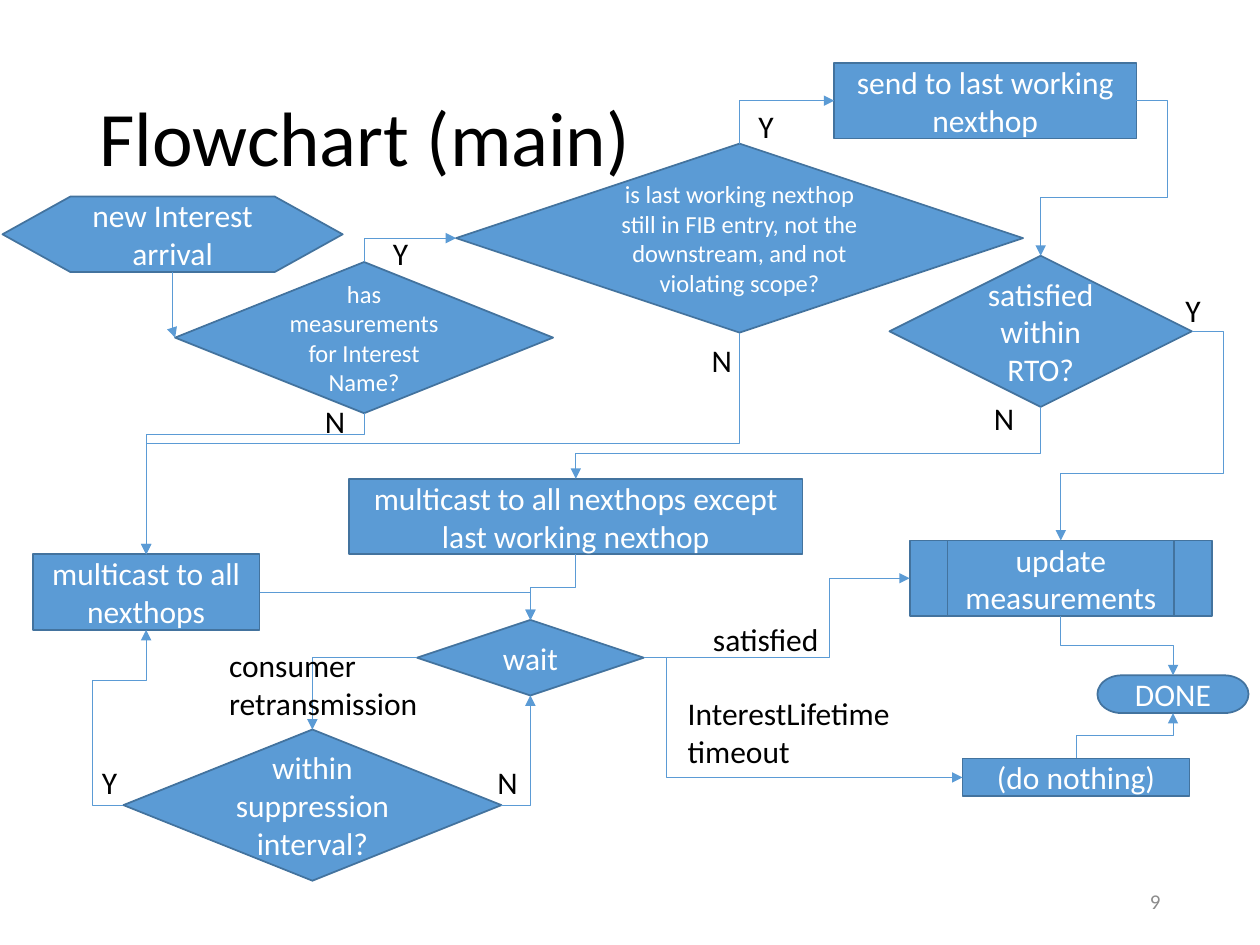
from dataclasses import dataclass
from typing import Any

from lxml.etree import SubElement
from pptx import Presentation
from pptx.dml.color import RGBColor
from pptx.enum.shapes import MSO_CONNECTOR as Route, MSO_SHAPE as Flow
from pptx.enum.text import MSO_ANCHOR as Anchor, MSO_AUTO_SIZE as Fit, PP_ALIGN as Align
from pptx.oxml.ns import qn
from pptx.util import Pt

PX = 9144
BLUE = RGBColor(0x5B, 0x9B, 0xD5)
DARK_BLUE = RGBColor(0x43, 0x73, 0x9E)
WHITE = RGBColor(0xFF, 0xFF, 0xFF)
BLACK = RGBColor(0, 0, 0)
GREY = RGBColor(0x8C, 0x8C, 0x8C)
TOP, LEFT, BOTTOM, RIGHT = range(4)


@dataclass(frozen=True)
class Step:
    kind: Any
    left: int
    top: int
    width: int
    height: int
    text: str
    size: int = 18

    def site(self, side: int) -> tuple[float, float]:
        x, y = self.left + self.width / 2, self.top + self.height / 2
        return ((x, self.top), (self.left, y),
                (x, self.top + self.height), (self.left + self.width, y))[side]


@dataclass(frozen=True)
class Link:
    source: str
    source_side: int
    target: str
    target_side: int
    turns: tuple[int, ...] = ()


@dataclass(frozen=True)
class Label:
    left: int
    top: int
    width: int
    height: int
    text: str
    wrap: bool = False


STEPS = {
    "arrival": Step(Flow.FLOWCHART_PREPARATION, 2, 156, 270, 60, "new Interest arrival"),
    "measured": Step(Flow.FLOWCHART_DECISION, 139, 208, 300, 120,
                     "has measurements for Interest Name?", 14),
    "multicast": Step(Flow.FLOWCHART_PROCESS, 26, 440, 180, 60, "multicast to all nexthops"),
    "send": Step(Flow.FLOWCHART_PROCESS, 662, 50, 240, 60, "send to last working nexthop"),
    "rto": Step(Flow.FLOWCHART_DECISION, 706, 203, 240, 120, "satisfied within RTO?"),
    "others": Step(Flow.FLOWCHART_PROCESS, 277, 380, 360, 60,
                   "multicast to all nexthops except last working nexthop"),
    "wait": Step(Flow.FLOWCHART_DECISION, 331, 492, 180, 60, "wait"),
    "done": Step(Flow.FLOWCHART_TERMINATOR, 871, 536, 120, 30, "DONE"),
    "suppress": Step(Flow.FLOWCHART_DECISION, 98, 579, 300, 120, "within suppression interval?"),
    "nothing": Step(Flow.FLOWCHART_PROCESS, 764, 602, 180, 30, "(do nothing)"),
    "update": Step(Flow.FLOWCHART_PREDEFINED_PROCESS, 722, 429, 240, 60, "update measurements"),
    "usable": Step(Flow.FLOWCHART_DECISION, 362, 114, 450, 150,
                   "is last working nexthop still in FIB entry, not the downstream, "
                   "and not violating scope?", 14),
}

LINKS = (
    Link("arrival", BOTTOM, "measured", LEFT),
    Link("measured", TOP, "usable", LEFT),
    Link("measured", BOTTOM, "multicast", TOP, (345,)),
    Link("usable", TOP, "send", LEFT),
    Link("usable", BOTTOM, "multicast", TOP, (352,)),
    Link("send", RIGHT, "rto", TOP, (927, 157)),
    Link("rto", BOTTOM, "others", TOP, (360,)),
    Link("rto", RIGHT, "update", TOP, (971, 376)),
    Link("others", BOTTOM, "wait", TOP, (466,)),
    Link("multicast", RIGHT, "wait", TOP),
    Link("wait", LEFT, "suppress", TOP),
    Link("wait", RIGHT, "update", LEFT, (658,)),
    Link("wait", RIGHT, "nothing", LEFT, (529,)),
    Link("suppress", LEFT, "multicast", BOTTOM, (73, 540)),
    Link("suppress", RIGHT, "wait", BOTTOM),
    Link("update", BOTTOM, "done", TOP, (512,)),
    Link("nothing", TOP, "done", BOTTOM, (584,)),
)

LABELS = (
    Label(931, 226, 32, 40, "Y"),
    Label(779, 312, 36, 40, "N"),
    Label(556, 487, 105, 40, "satisfied"),
    Label(172, 508, 184, 71, "consumer retransmission", True),
    Label(71, 601, 32, 40, "Y"),
    Label(385, 601, 36, 40, "N"),
    Label(536, 546, 203, 71, "InterestLifetime timeout", True),
    Label(302, 181, 32, 40, "Y"),
    Label(248, 314, 36, 40, "N"),
    Label(592, 80, 32, 40, "Y"),
    Label(555, 266, 36, 40, "N"),
)


def emu(*lengths: float) -> list[int]:
    return [round(length * PX) for length in lengths]


def write(shape: Any, text: str, size: int, color: RGBColor,
          frame_format: dict[str, Any], line_format: dict[str, Any]) -> None:
    frame = shape.text_frame
    line = frame.paragraphs[0]
    words = line.add_run()
    words.text = text
    words.font.color.rgb = color
    formats = ((frame, frame_format), (line, line_format),
               (words.font, {"name": "Calibri", "size": Pt(size)}))
    for part, values in formats:
        for name, value in values.items():
            setattr(part, name, value)


def draw_step(slide: Any, step: Step) -> Any:
    shape = slide.shapes.add_shape(
        step.kind, *emu(step.left, step.top, step.width, step.height))
    shape.shadow.inherit = False
    shape.fill.solid()
    shape.fill.fore_color.rgb = BLUE
    shape.line.color.rgb = DARK_BLUE
    shape.line.width = Pt(1)
    write(shape, step.text, step.size, WHITE,
          {"word_wrap": True, "vertical_anchor": Anchor.MIDDLE}, {"alignment": Align.CENTER})
    return shape


def draw_link(slide: Any, link: Link, shapes: dict[str, Any]) -> None:
    start = STEPS[link.source].site(link.source_side)
    end = STEPS[link.target].site(link.target_side)
    connector = slide.shapes.add_connector(Route.ELBOW, *emu(*start, *end))
    connector.begin_connect(shapes[link.source], link.source_side)
    connector.end_connect(shapes[link.target], link.target_side)
    connector.line.color.rgb = BLUE
    connector.line.width = Pt(0.5)

    dx, dy = end[0] - start[0], end[1] - start[1]
    upright = link.source_side in (TOP, BOTTOM)
    width, height = (abs(dy), abs(dx)) if upright else (abs(dx), abs(dy))
    box = {
        "left": (start[0] + end[0] - width) / 2,
        "top": (start[1] + end[1] - height) / 2,
        "width": width,
        "height": height,
    }
    for name, length in box.items():
        setattr(connector, name, round(length * PX))

    properties = connector._element.spPr
    transform = properties.find(qn("a:xfrm"))
    flips = (dy < 0, dx > 0) if upright else (dx < 0, dy < 0)
    for name, flipped in zip(("flipH", "flipV"), flips):
        transform.set(name, str(int(flipped)))
    if upright:
        transform.set("rot", "5400000")

    geometry = properties.find(qn("a:prstGeom"))
    geometry.set("prst", f"bentConnector{2 + len(link.turns) + (0 if link.turns else 0)}")
    guides = geometry.find(qn("a:avLst"))
    for index, turn in enumerate(link.turns):
        axis = (index + upright) % 2
        share = (turn - start[axis]) / (end[axis] - start[axis])
        SubElement(guides, qn("a:gd"), name=f"adj{index + 1}", fmla=f"val {round(share * 100000)}")
    SubElement(properties.find(qn("a:ln")), qn("a:tailEnd"), type="triangle")
    SubElement(properties, qn("a:effectLst"))


def draw_label(slide: Any, label: Label, size: int = 18, color: RGBColor = BLACK,
               anchor: Any = Anchor.TOP, fit: Any = Fit.SHAPE_TO_FIT_TEXT,
               **line_format: Any) -> None:
    box = slide.shapes.add_textbox(*emu(label.left, label.top, label.width, label.height))
    write(box, label.text, size, color,
          {"word_wrap": label.wrap, "vertical_anchor": anchor, "auto_size": fit}, line_format)


def main() -> None:
    deck = Presentation()
    deck.slide_width, deck.slide_height = emu(1000, 750)
    slide = deck.slides.add_slide(deck.slide_layouts[6])
    shapes = {name: draw_step(slide, step) for name, step in STEPS.items()}
    for link in LINKS:
        draw_link(slide, link, shapes)
    for label in LABELS:
        draw_label(slide, label)
    draw_label(slide, Label(69, 40, 862, 145, "Flowchart (main)", True), 44,
               anchor=Anchor.MIDDLE, fit=Fit.NONE, line_spacing=0.9)
    draw_label(slide, Label(706, 695, 225, 40, "9", True), 12, GREY,
               Anchor.MIDDLE, Fit.NONE, alignment=Align.RIGHT)
    deck.save("out.pptx")


if __name__ == "__main__":
    main()
